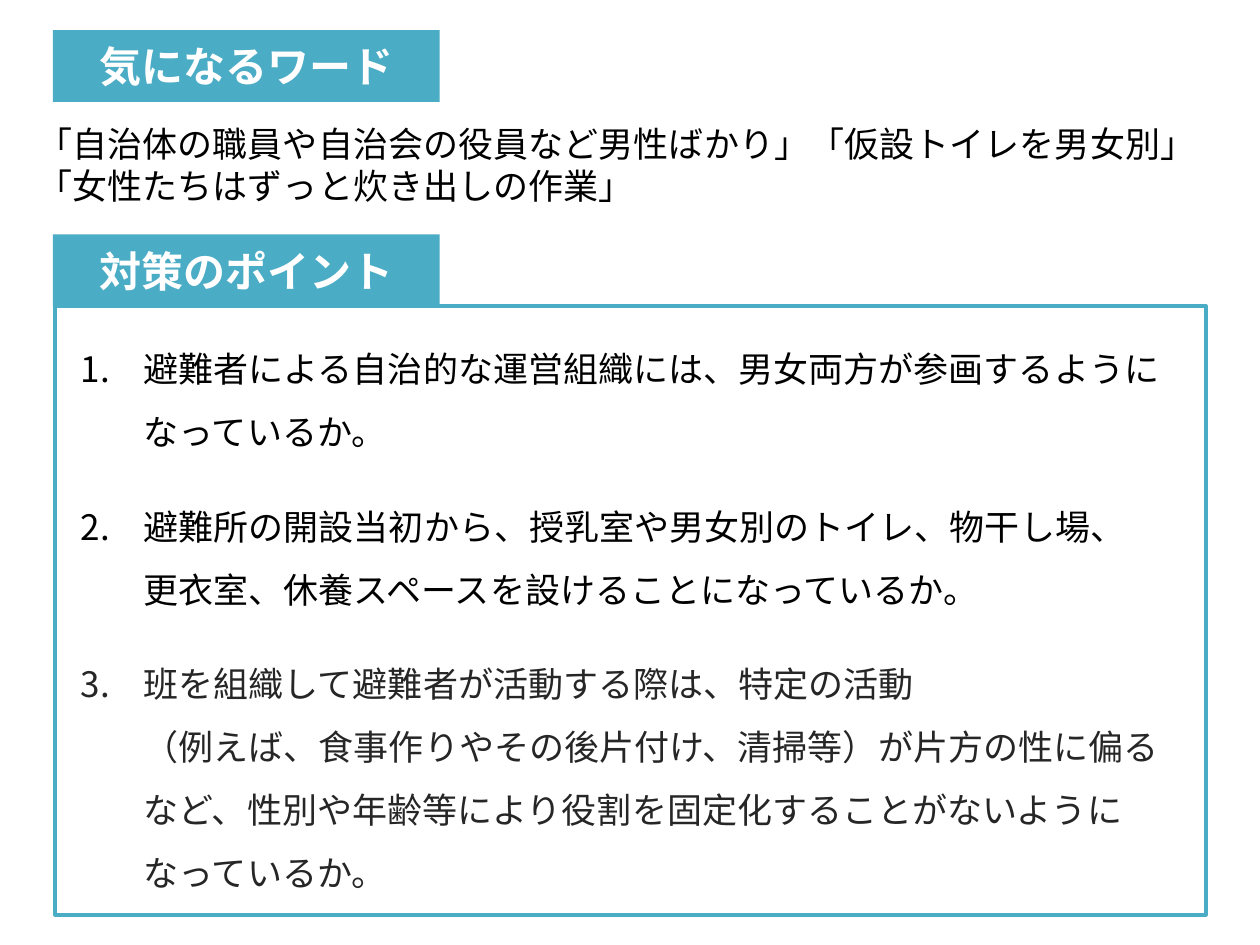
from dataclasses import dataclass

from lxml import etree
from pptx import Presentation
from pptx.dml.color import RGBColor
from pptx.enum.shapes import MSO_SHAPE
from pptx.enum.text import MSO_ANCHOR, MSO_AUTO_SIZE, PP_ALIGN
from pptx.oxml.ns import qn
from pptx.util import Inches, Pt

RECTANGLE = MSO_SHAPE.RECTANGLE
MIDDLE = MSO_ANCHOR.MIDDLE
FIT_SHAPE = MSO_AUTO_SIZE.SHAPE_TO_FIT_TEXT
CENTER = PP_ALIGN.CENTER
LEFT = PP_ALIGN.LEFT


@dataclass(frozen=True)
class Theme:
    font: str = "Noto Sans CJK JP"
    accent: RGBColor = RGBColor(0x4B, 0xAC, 0xC6)
    white: RGBColor = RGBColor(0xFF, 0xFF, 0xFF)
    black: RGBColor = RGBColor(0x00, 0x00, 0x00)
    charcoal: RGBColor = RGBColor(0x26, 0x26, 0x26)
    heading_size: Pt = Pt(24)
    body_size: Pt = Pt(20)


THEME = Theme()


def style_runs(paragraph, size, color, bold=False):
    for run in paragraph.runs:
        run.font.size = size
        run.font.bold = bold
        run.font.color.rgb = color
        run.font.name = THEME.font
        east_asian = etree.SubElement(run.font._element, qn("a:ea"))
        east_asian.set("typeface", THEME.font)


def add_heading(slide, heading, top):
    banner = slide.shapes.add_shape(
        RECTANGLE, Inches(0.42), Inches(top), Inches(3.07), Inches(0.57))
    banner.shadow.inherit = False
    banner.fill.solid()
    banner.fill.fore_color.rgb = THEME.accent
    banner.line.fill.background()
    banner.text_frame.text = heading
    banner.text_frame.vertical_anchor = MIDDLE
    title_line = banner.text_frame.paragraphs[0]
    title_line.alignment = CENTER
    style_runs(title_line, THEME.heading_size, THEME.white, bold=True)


prs = Presentation()
prs.slide_width = Inches(10)
prs.slide_height = Inches(7.5)
slide = prs.slides.add_slide(prs.slide_layouts[6])

add_heading(slide, "気になるワード", 0.24)

quotes = slide.shapes.add_textbox(
    Inches(0.2), Inches(0.92), Inches(9.61), Inches(0.77)).text_frame
quotes.word_wrap = True
quotes.auto_size = FIT_SHAPE
quotes.text = (
    "「自治体の職員や自治会の役員など男性ばかり」「仮設トイレを男女別」"
    "「女性たちはずっと炊き出しの作業」")
style_runs(quotes.paragraphs[0], THEME.body_size, THEME.black)

points_box = slide.shapes.add_shape(
    RECTANGLE, Inches(0.44), Inches(2.43), Inches(9.13), Inches(4.83))
points_box.shadow.inherit = False
points_box.fill.background()
points_box.line.color.rgb = THEME.accent
points_box.line.width = Pt(2.25)

points = [
    ("避難者による自治的な運営組織には、男女両方が参画するようになっているか。",
     THEME.black),
    ("避難所の開設当初から、授乳室や男女別のトイレ、物干し場、\n"
     "更衣室、休養スペースを設けることになっているか。",
     THEME.black),
    ("班を組織して避難者が活動する際は、特定の活動\n"
     "（例えば、食事作りやその後片付け、清掃等）が片方の性に偏る\n"
     "など、性別や年齢等により役割を固定化することがないように\n"
     "なっているか。",
     THEME.charcoal),
]
checklist = points_box.text_frame
checklist.word_wrap = True
checklist.vertical_anchor = MIDDLE
checklist.margin_left = Inches(0.2)

for index, (point, color) in enumerate(points):
    item = checklist.add_paragraph() if index else checklist.paragraphs[0]
    item.text = point
    item.alignment = LEFT
    item.line_spacing = 1.5
    item.space_before = Pt(18)
    style_runs(item, THEME.body_size, color)
    properties = item._p.get_or_add_pPr()
    properties.set("marL", str(Inches(0.5)))
    properties.set("indent", str(-Inches(0.5)))
    numbering = etree.SubElement(properties, qn("a:buAutoNum"))
    numbering.set("type", "arabicPeriod")

add_heading(slide, "対策のポイント", 1.86)

prs.save("out.pptx")
